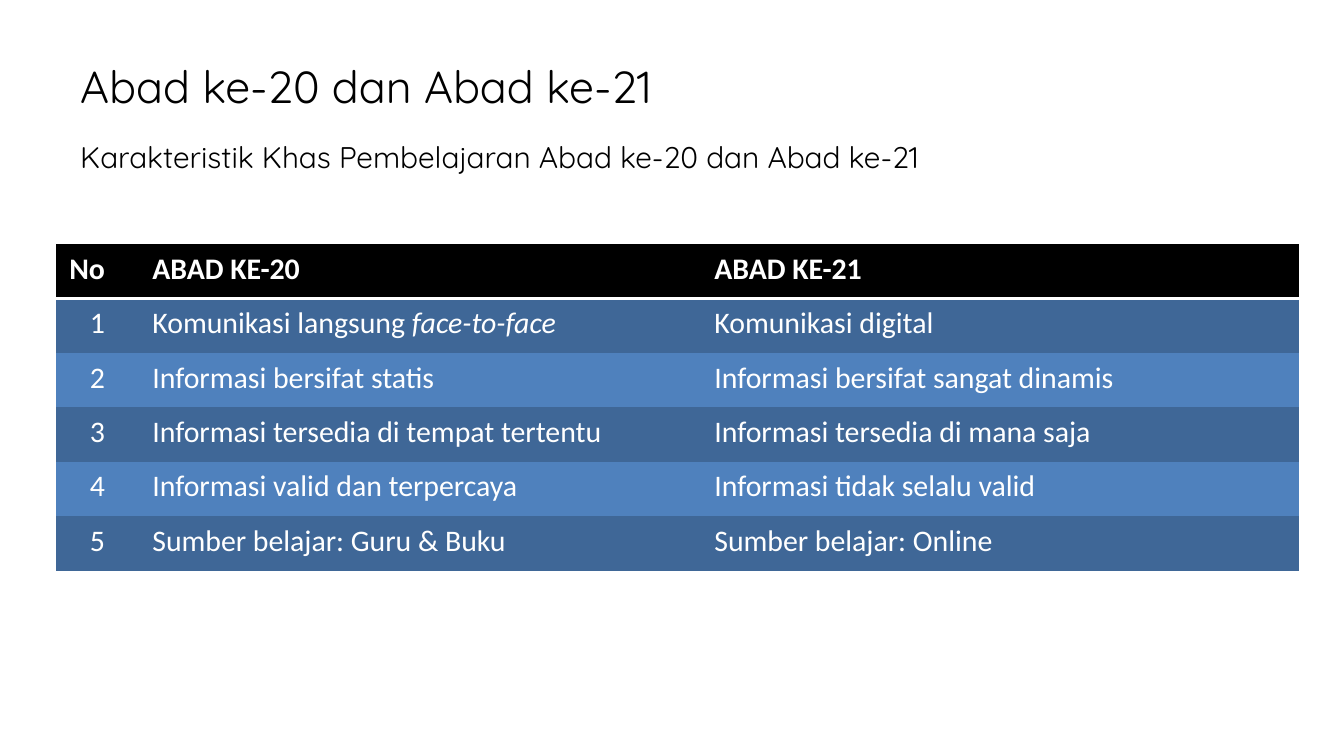
import pptx
import pptx.dml.color
import pptx.enum.text
import pptx.oxml
import pptx.oxml.ns
import pptx.util

EMU_PER_PX = 914400 / 134.4
WHITE, BLACK = "FFFFFF", "000000"
BAND_COLOURS = ("3F6797", "4F81BD")
PLAIN_TABLE_STYLE = "{2D5ABB26-0587-4C30-8999-92F81FD0307C}"

HEADINGS = ("No", "ABAD KE-20", "ABAD KE-21")
# A comparison entry is a list of (text, italic) pieces or a plain string.
COMPARISONS = [
    ([("Komunikasi langsung ", False), ("face-to-face", True)], "Komunikasi digital"),
    ("Informasi bersifat statis", "Informasi bersifat sangat dinamis"),
    ("Informasi tersedia di tempat tertentu", "Informasi tersedia di mana saja"),
    ("Informasi valid dan terpercaya", "Informasi tidak selalu valid"),
    ("Sumber belajar: Guru & Buku", "Sumber belajar: Online"),
]


def px(length):
    return pptx.util.Emu(round(length * EMU_PER_PX))


def colour(value):
    return pptx.dml.color.RGBColor.from_string(value)


def write(frame, text, font="Calibri", size=16, fill=WHITE, bold=False, centred=False):
    frame.word_wrap = True
    paragraph = frame.paragraphs[0]
    if centred:
        paragraph.alignment = pptx.enum.text.PP_ALIGN.CENTER
    pieces = [(text, False)] if isinstance(text, str) else text
    for words, italic in pieces:
        run = paragraph.add_run()
        run.text = words
        run.font.name = font
        run.font.size = pptx.util.Pt(size)
        run.font.color.rgb = colour(fill)
        run.font.bold = bold
        run.font.italic = italic


def underline_cell(cell, width, line_colour):
    properties = cell._tc.get_or_add_tcPr()
    border = pptx.oxml.parse_xml(
        f'<a:lnB {pptx.oxml.ns.nsdecls("a")} w="{pptx.util.Pt(width)}">'
        f'<a:solidFill><a:srgbClr val="{line_colour}"/></a:solidFill></a:lnB>'
    )
    properties.insert(0, border)  # borders come before the fill


def add_heading(slide, left, top, width):
    lines = [
        ("Abad ke-20 dan Abad ke-21", 24, 0, width - 90, 67),
        ("Karakteristik Khas Pembelajaran Abad ke-20 dan Abad ke-21", 16, 80, width, 50),
    ]
    for text, size, offset, line_width, height in lines:
        heading = slide.shapes.add_textbox(px(left), px(top + offset), px(line_width), px(height))
        write(heading.text_frame, text, font="Quicksand", size=size, fill=BLACK)


def add_comparison(slide, left, top, width, height):
    number_width, first_century_width = 83, 562
    column_widths = (number_width, first_century_width,
                     width - number_width - first_century_width)
    rows = [HEADINGS] + [(str(number), *entries)
                         for number, entries in enumerate(COMPARISONS, 1)]
    frame = slide.shapes.add_table(len(rows), len(HEADINGS),
                                   px(left), px(top), px(width), px(height))
    table = frame.table
    table.horz_banding = False
    table._tbl.tblPr.find(pptx.oxml.ns.qn("a:tableStyleId")).text = PLAIN_TABLE_STYLE
    for column, column_width in zip(table.columns, column_widths):
        column.width = px(column_width)

    for row_index, entries in enumerate(rows):
        is_header = row_index == 0
        band = BLACK if is_header else BAND_COLOURS[(row_index - 1) % 2]
        table.rows[row_index].height = px(height / len(rows))
        for column_index, entry in enumerate(entries):
            cell = table.cell(row_index, column_index)
            cell.fill.solid()
            cell.fill.fore_color.rgb = colour(band)
            write(cell.text_frame, entry, bold=is_header,
                  centred=column_index == 0 and not is_header)
            if is_header:
                underline_cell(cell, 2, WHITE)


def main():
    presentation = pptx.Presentation()
    presentation.slide_width, presentation.slide_height = px(1344), px(756)
    slide = presentation.slides.add_slide(presentation.slide_layouts[6])
    slide.background.fill.solid()
    slide.background.fill.fore_color.rgb = colour(WHITE)

    # Title and subtitle
    add_heading(slide, 67, 52, 1132)
    # Table of the two centuries
    add_comparison(slide, 56, 244, 1243, 327)

    presentation.save("out.pptx")


if __name__ == "__main__":
    main()
